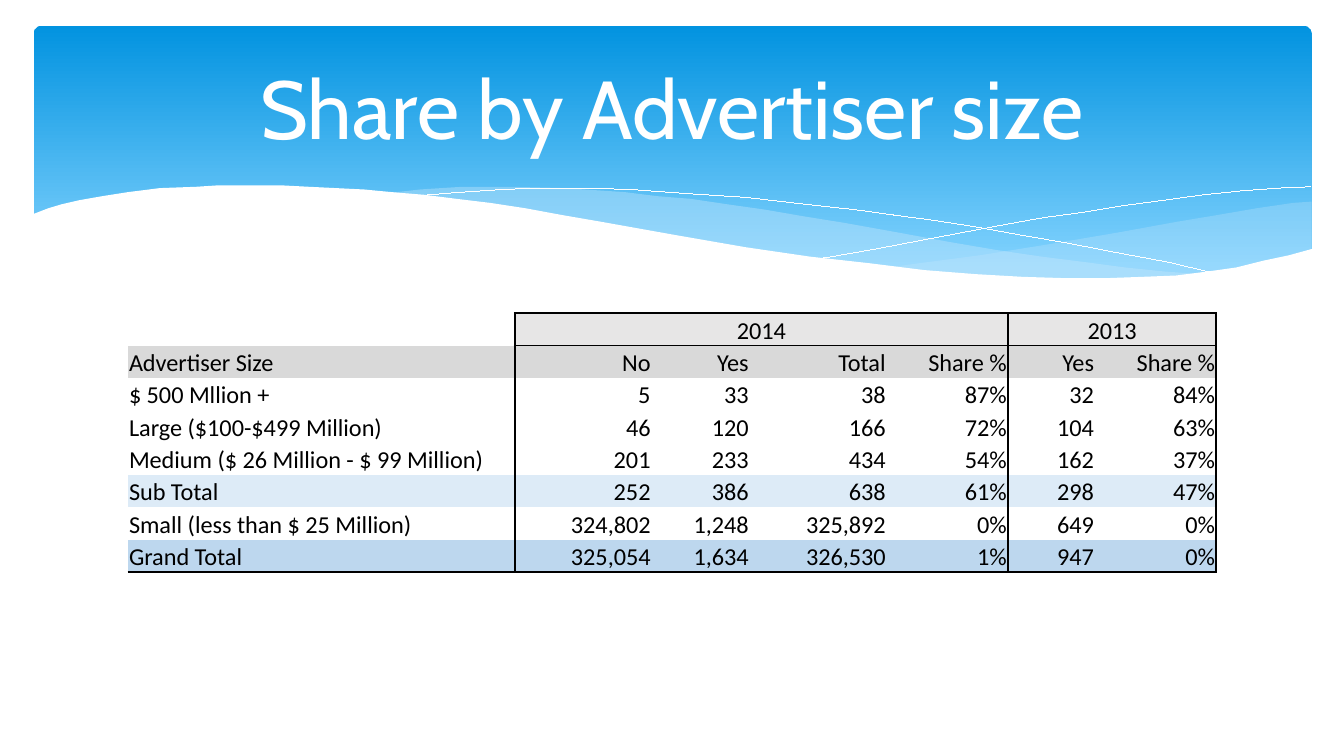
from dataclasses import dataclass

from lxml.etree import SubElement
from pptx import Presentation
from pptx.dml.color import RGBColor
from pptx.enum.shapes import MSO_SHAPE
from pptx.enum.text import MSO_ANCHOR, PP_ALIGN
from pptx.oxml.ns import qn
from pptx.util import Inches, Pt


@dataclass(frozen=True)
class Theme:
    sky: str = "0293E0"
    pale_sky: str = "83D3FE"
    mist: str = "C6E7FC"
    white: str = "FFFFFF"
    black: str = "000000"
    year_fill: str = "E7E6E6"
    heading_fill: str = "D9D9D9"
    subtotal_fill: str = "DDEBF7"
    total_fill: str = "BDD7EE"
    title_font: str = "Cabin"
    table_font: str = "Calibri"
    title_size: int = 44
    table_size: int = 13


THEME = Theme()
NO_STYLE = "{2D5ABB26-0587-4C30-8999-92F81FD0307C}"
HAIRLINE = Pt(0.01)

# Outlines of the header waves, in inches
RIGHT_WAVE = [
    (9.76, 1.5), (9.62, 1.51), (9.35, 1.55), (9.06, 1.6), (8.76, 1.65), (8.32, 1.73),
    (7.79, 1.82), (7.29, 1.9), (6.83, 1.96), (6.61, 1.99), (6.91, 2.02), (7.32, 2.05),
    (7.81, 2.08), (8.35, 2.08), (8.72, 2.06), (9.05, 2.02), (9.35, 1.96), (9.63, 1.89),
    (9.76, 1.85),
]
MIDDLE_WAVE = [
    (8.93, 2.04), (8.66, 2.02), (8.37, 1.99), (8.07, 1.95), (7.75, 1.91), (7.41, 1.86),
    (7.06, 1.8), (6.68, 1.73), (6.29, 1.66), (5.98, 1.61), (5.69, 1.56), (5.41, 1.52),
    (5.14, 1.48), (4.89, 1.46), (4.65, 1.43), (4.2, 1.4), (3.8, 1.39), (3.44, 1.39),
    (3.13, 1.41), (2.86, 1.44), (3.23, 1.47), (3.62, 1.52), (4.04, 1.58), (4.49, 1.66),
    (4.91, 1.74), (5.3, 1.8), (5.66, 1.86), (6.01, 1.91), (6.34, 1.96), (6.65, 2.0),
    (6.95, 2.03), (7.22, 2.05), (7.61, 2.08), (8.07, 2.09), (8.48, 2.08), (8.76, 2.06),
]
FALLING_LINE = [
    (3.09, 1.47), (3.18, 1.45), (3.44, 1.43), (3.74, 1.41), (4.01, 1.4), (4.33, 1.4),
    (4.69, 1.41), (5.1, 1.44), (5.56, 1.47), (5.82, 1.5), (6.08, 1.53), (6.36, 1.56),
    (6.65, 1.6), (6.95, 1.64), (7.27, 1.69), (7.6, 1.75), (7.95, 1.81), (8.31, 1.88),
    (8.69, 1.95), (9.07, 2.04),
]
RISING_LINE = [
    (6.13, 1.92), (6.53, 1.85), (6.95, 1.77), (7.48, 1.67), (7.76, 1.62), (8.06, 1.58),
    (8.36, 1.53), (8.66, 1.49), (8.95, 1.45), (9.24, 1.42), (9.51, 1.4), (9.75, 1.39),
]
WHITE_WAVE = [
    (9.77, 1.85), (9.59, 1.9), (9.4, 1.94), (9.2, 1.99), (8.99, 2.02), (8.75, 2.05),
    (8.5, 2.06), (8.23, 2.07), (7.93, 2.07), (7.61, 2.06), (7.26, 2.04), (6.88, 2.01),
    (6.48, 1.96), (6.03, 1.91), (5.55, 1.84), (5.03, 1.75), (4.47, 1.65), (4.18, 1.6),
    (3.91, 1.55), (3.65, 1.51), (3.4, 1.48), (3.16, 1.45), (2.92, 1.43), (2.71, 1.41),
    (2.5, 1.4), (2.3, 1.39), (2.11, 1.38), (1.61, 1.38), (1.46, 1.39), (1.19, 1.4),
    (0.95, 1.43), (0.76, 1.46), (0.59, 1.49), (0.46, 1.52), (0.36, 1.55), (0.23, 1.6),
    (0.23, 2.47), (9.77, 2.47),
]

# Table content and layout
ROWS = [
    ["", "2014", "", "", "", "2013", ""],
    ["Advertiser Size", "No", "Yes", "Total", "Share %", "Yes", "Share %"],
    ["$ 500 Mllion +", "5", "33", "38", "87%", "32", "84%"],
    ["Large ($100-$499 Million)", "46", "120", "166", "72%", "104", "63%"],
    ["Medium ($ 26 Million - $ 99 Million)", "201", "233", "434", "54%", "162", "37%"],
    ["Sub Total", "252", "386", "638", "61%", "298", "47%"],
    ["Small (less than $ 25 Million)", "324,802", "1,248", "325,892", "0%", "649", "0%"],
    ["Grand Total", "325,054", "1,634", "326,530", "1%", "947", "0%"],
]
COLUMN_WIDTHS = [2.88, 1.02, 0.73, 1.02, 0.9, 0.65, 0.9]
ROW_FILLS = {1: THEME.heading_fill, 5: THEME.subtotal_fill, 7: THEME.total_fill}
RULED_EDGES = {1, 5, 7}  # column edges that carry a vertical rule
YEAR_SPANS = [(1, 4), (5, 6)]


def color(value):
    return RGBColor.from_string(value)


def add_run(para, text, font, size, text_color):
    span = para.add_run()
    span.text = text
    span.font.name = font
    span.font.size = Pt(size)
    span.font.color.rgb = color(text_color)


def add_outline(slide, points, fill=None, opacity=100, line=None):
    points = [(Inches(x), Inches(y)) for x, y in points]
    builder = slide.shapes.build_freeform(*points[0])
    builder.add_line_segments(points[1:], close=fill is not None)
    shape = builder.convert_to_shape()
    shape.shadow.inherit = False
    if fill:
        shape.fill.solid()
        shape.fill.fore_color.rgb = color(fill)
        if opacity < 100:
            tint = shape.fill._xPr.find(".//" + qn("a:srgbClr"))
            SubElement(tint, qn("a:alpha")).set("val", str(opacity * 1000))
    else:
        shape.fill.background()
    if line:
        shape.line.color.rgb = color(line)
        shape.line.width = HAIRLINE
    else:
        shape.line.fill.background()


def add_header(slide):
    panel = slide.shapes.add_shape(MSO_SHAPE.ROUNDED_RECTANGLE, Inches(0.25),
                                   Inches(0.19), Inches(9.51), Inches(2.02))
    panel.adjustments[0] = 0.03
    panel.shadow.inherit = False
    panel.line.fill.background()
    panel.fill.gradient()
    panel.fill.gradient_angle = 270
    stops = [(0, THEME.sky), (0.9, THEME.pale_sky)]
    for stop, (position, shade) in zip(panel.fill.gradient_stops, stops):
        stop.position = position
        stop.color.rgb = color(shade)

    add_outline(slide, RIGHT_WAVE, THEME.mist, opacity=29)
    add_outline(slide, MIDDLE_WAVE, THEME.mist, opacity=40)
    add_outline(slide, FALLING_LINE, line=THEME.white)
    add_outline(slide, RISING_LINE, line=THEME.white)
    add_outline(slide, WHITE_WAVE, THEME.white)


def set_title(slide, text):
    title = slide.shapes.title
    title.left, title.top = Inches(0.5), Inches(0.28)
    title.width, title.height = Inches(9), Inches(1.03)
    title.text_frame.vertical_anchor = MSO_ANCHOR.MIDDLE
    para = title.text_frame.paragraphs[0]
    para.alignment = PP_ALIGN.CENTER
    add_run(para, text, THEME.title_font, THEME.title_size, THEME.white)
    slide.shapes._spTree.append(title._element)  # in front of the header


def add_borders(cell, row, column):
    end = column + cell.span_width
    in_years = row == 0 and column > 0
    ruled = {
        "a:lnL": column in RULED_EDGES,
        "a:lnR": end in RULED_EDGES,
        "a:lnT": in_years or (row == 1 and column > 0),
        "a:lnB": in_years or row == len(ROWS) - 1,
    }
    properties = cell._tc.get_or_add_tcPr()
    for side, shown in ruled.items():
        border = SubElement(properties, qn(side), w=str(Pt(1)))
        if shown:
            fill = SubElement(border, qn("a:solidFill"))
            SubElement(fill, qn("a:srgbClr"), val=THEME.black)
        else:
            SubElement(border, qn("a:noFill"))


def format_cell(cell, row, column, text):
    cell.margin_left = cell.margin_right = cell.margin_top = Inches(0.01)
    cell.margin_bottom = 0
    cell.vertical_anchor = MSO_ANCHOR.BOTTOM
    add_borders(cell, row, column)
    fill = THEME.year_fill if row == 0 and column else ROW_FILLS.get(row)
    if fill:
        cell.fill.solid()
        cell.fill.fore_color.rgb = color(fill)
    else:
        cell.fill.background()
    para = cell.text_frame.paragraphs[0]
    if text:
        numeric = PP_ALIGN.CENTER if row == 0 else PP_ALIGN.RIGHT
        para.alignment = numeric if column else PP_ALIGN.LEFT
        add_run(para, text, THEME.table_font, THEME.table_size, THEME.black)
    else:
        SubElement(para._p, qn("a:endParaRPr"), sz=str(THEME.table_size * 100))


def add_share_table(slide):
    frame = slide.shapes.add_table(len(ROWS), len(COLUMN_WIDTHS), Inches(0.95),
                                   Inches(2.33), Inches(8.1), Inches(1.93))
    table = frame.table
    table.first_row = table.horz_banding = False
    table._tbl.tblPr.find(qn("a:tableStyleId")).text = NO_STYLE
    for column, width in zip(table.columns, COLUMN_WIDTHS):
        column.width = Inches(width)
    for first, last in YEAR_SPANS:
        table.cell(0, first).merge(table.cell(0, last))
    for row, texts in enumerate(ROWS):
        for column, text in enumerate(texts):
            format_cell(table.cell(row, column), row, column, text)


def main():
    deck = Presentation()
    deck.slide_width = Inches(10)
    deck.slide_height = deck.slide_width * 9 // 16
    slide = deck.slides.add_slide(deck.slide_layouts[5])
    add_header(slide)
    set_title(slide, "Share by Advertiser size")
    add_share_table(slide)
    deck.save("out.pptx")


if __name__ == "__main__":
    main()
